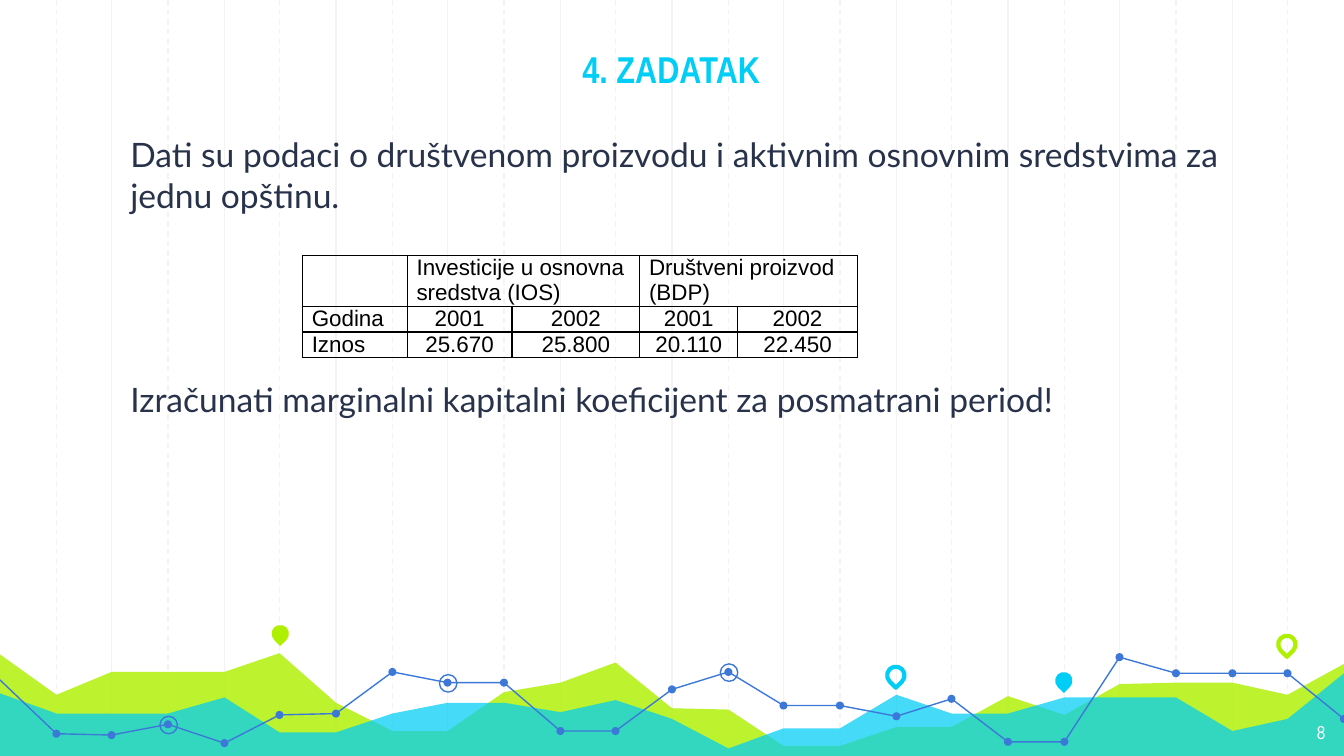
"""Build the task slide with its table above a band of area and line shapes."""
from lxml import etree
from pptx import Presentation
from pptx.dml.color import RGBColor
from pptx.enum.dml import MSO_LINE
from pptx.enum.shapes import MSO_CONNECTOR, MSO_SHAPE
from pptx.enum.text import MSO_ANCHOR, PP_ALIGN
from pptx.oxml.ns import qn
from pptx.util import Pt

PX = 9144
DASH = MSO_LINE.DASH
STRAIGHT = MSO_CONNECTOR.STRAIGHT
OVAL, DROP = MSO_SHAPE.OVAL, MSO_SHAPE.TEAR
LEFT, CENTER, RIGHT = PP_ALIGN.LEFT, PP_ALIGN.CENTER, PP_ALIGN.RIGHT
BOTTOM = MSO_ANCHOR.BOTTOM

WHITE = RGBColor(0xFF, 0xFF, 0xFF)
BLACK = RGBColor(0x00, 0x00, 0x00)
GRAY = RGBColor(0xF3, 0xF3, 0xF3)
LIME = RGBColor(0xAF, 0xF0, 0x00)
CYAN = RGBColor(0x00, 0xCE, 0xF6)
BLUE = RGBColor(0x3C, 0x78, 0xD8)
NAVY = RGBColor(0x28, 0x32, 0x4A)


def paint(shape, fill=None, line=None, width=0.75):
    shape.shadow.inherit = False
    if fill is None:
        shape.fill.background()
    else:
        shape.fill.solid()
        shape.fill.fore_color.rgb = fill
    if line is None:
        shape.line.fill.background()
    else:
        shape.line.color.rgb = line
        shape.line.width = Pt(width)


def style(frame, face, size, color, align=LEFT, bold=False):
    for para in frame.paragraphs:
        para.alignment = align
        for run in para.runs:
            run.font.name = face
            run.font.size = Pt(size)
            run.font.color.rgb = color
            run.font.bold = bold


deck = Presentation()
deck.slide_width = 1000 * PX
deck.slide_height = deck.slide_width * 9 // 16
slide = deck.slides.add_slide(deck.slide_layouts[5])
shapes = slide.shapes
grid = [round(i * 1000 / 24) for i in range(25)]

for first in (2, 1):
    for x in grid[first:24:2]:
        rule = shapes.add_connector(STRAIGHT, x * PX, 0, x * PX, 565 * PX)
        rule.line.color.rgb = GRAY
        rule.line.width = Pt(0.75)
        if first == 1:
            rule.line.dash_style = DASH
        etree.SubElement(rule._element.spPr, qn("a:effectLst"))

areas = [
    (LIME, 82, [487, 517, 500, 500, 500, 486, 523, 544, 544, 515, 508, 493, 527,
                528, 555, 555, 541, 541, 518, 532, 509, 508, 508, 517, 494]),
    (CYAN, 73, [516, 531, 531, 531, 519, 545, 545, 531, 523, 523, 530, 521, 535,
                557, 542, 542, 517, 531, 531, 519, 519, 519, 544, 535, 501]),
]
for color, alpha, tops in areas:
    edge = list(zip(grid, tops)) + [(1002, 564), (-3, 564)]
    pen = shapes.build_freeform(*edge[0], scale=PX)
    pen.add_line_segments(edge[1:], close=True)
    area = pen.convert_to_shape()
    paint(area, fill=color)
    tint = area._element.spPr.find(qn("a:solidFill")).find(qn("a:srgbClr"))
    etree.SubElement(tint, qn("a:alpha"), val=str(alpha * 1000))

pins = [
    (202, 465, LIME, None),
    (660, 496, None, CYAN),
    (785, 500, CYAN, None),
    (951, 473, None, LIME),
]
for x, y, fill, line in pins:
    pin = shapes.add_shape(DROP, x * PX, y * PX, 13 * PX, 13 * PX)
    pin.rotation = 135
    paint(pin, fill, line, 2.25)

trend = list(zip(grid, [
    506, 546, 547, 539, 553, 532, 531, 500, 508, 508, 544, 544, 513,
    500, 525, 525, 533, 520, 552, 552, 489, 501, 501, 501, 535]))
for start, end in ((0, 11), (11, 20), (20, 24)):
    pen = shapes.build_freeform(*trend[start], scale=PX)
    pen.add_line_segments(trend[start + 1:end + 1], close=False)
    paint(pen.convert_to_shape(), line=BLUE)
for x, y in trend[1:]:
    dot = shapes.add_shape(OVAL, (x - 3) * PX, (y - 3) * PX, 6 * PX, 6 * PX)
    paint(dot, fill=BLUE)
for i in (3, 8, 13):
    x, y = trend[i]
    ring = shapes.add_shape(OVAL, (x - 6) * PX, (y - 6) * PX, 13 * PX, 13 * PX)
    paint(ring, line=BLUE)

page = shapes.add_textbox(936 * PX, 528 * PX, 60 * PX, 35 * PX)
page.text_frame.text = "8"
style(page.text_frame, "Arial Narrow", 10, WHITE, RIGHT)

body = shapes.add_textbox(74 * PX, 90 * PX, 850 * PX, 333 * PX)
body.text_frame.text = (
    "Dati su podaci o društvenom proizvodu i aktivnim osnovnim sredstvima za jednu opštinu.\n"
    "Izračunati marginalni kapitalni koeficijent za posmatrani period!")
style(body.text_frame, "Lato", 18, NAVY)
body.text_frame.paragraphs[1].space_before = Pt(88)

title = shapes.title
title.left, title.top, title.width, title.height = 117 * PX, 0, 765 * PX, 78 * PX
title.text_frame.text = "4. ZADATAK"
title.text_frame.vertical_anchor = BOTTOM
style(title.text_frame, "Arial Narrow", 20, CYAN, CENTER, True)
shapes._spTree.append(title._element)

for box in (page, body, title):
    frame = box.text_frame
    frame.word_wrap = True
    frame.margin_left = frame.margin_right = 10 * PX
    frame.margin_top = frame.margin_bottom = 10 * PX
body.text_frame.margin_left = 23 * PX

rows = [
    ["", "Investicije u osnovna sredstva (IOS)", "", "Društveni proizvod (BDP)", ""],
    ["Godina", "2001", "2002", "2001", "2002"],
    ["Iznos", "25.670", "25.800", "20.110", "22.450"],
]
table = shapes.add_table(3, 5, 225 * PX, 190 * PX, 413 * PX, 76 * PX).table
table.first_row = table.horz_banding = False
for col, width in zip(table.columns, (78, 78, 95, 73, 89)):
    col.width = width * PX
for row, height in zip(table.rows, (38, 19, 19)):
    row.height = height * PX
for r, row in enumerate(rows):
    for c, text in enumerate(row):
        cell = table.cell(r, c)
        cell.margin_left = cell.margin_right = 7 * PX
        cell.margin_top = cell.margin_bottom = 0
        cell.text_frame.text = text
        style(cell.text_frame, "Arial", 12, BLACK, CENTER if r and c else LEFT)
        props = cell._tc.get_or_add_tcPr()
        for side in ("a:lnL", "a:lnR", "a:lnT", "a:lnB"):
            line = etree.SubElement(props, qn(side), w=str(Pt(0.75)))
            fill = etree.SubElement(line, qn("a:solidFill"))
            etree.SubElement(fill, qn("a:srgbClr"), val=str(BLACK))
        cell.fill.background()
for c in (1, 3):
    table.cell(0, c).merge(table.cell(0, c + 1))

deck.save("out.pptx")
